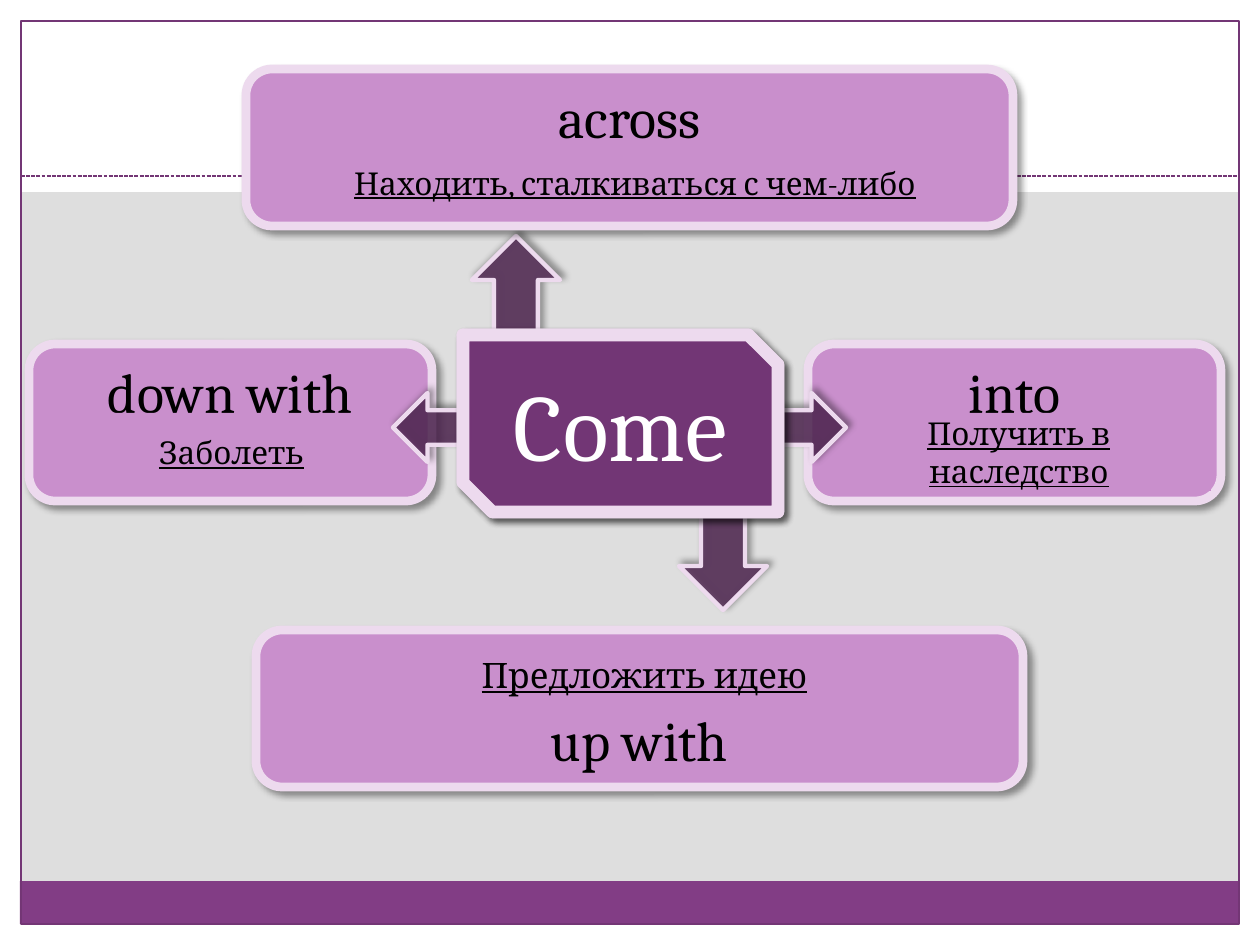
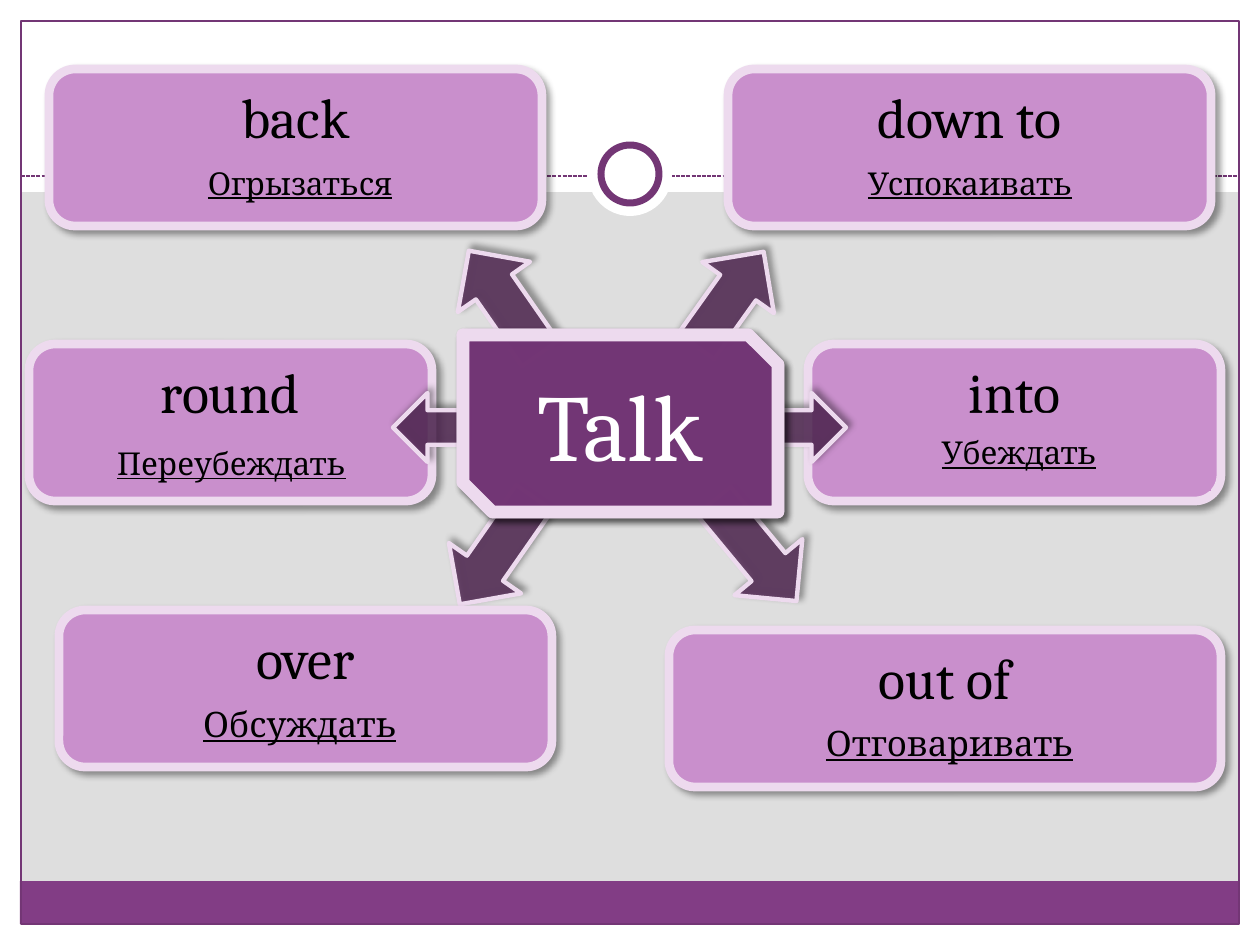
from dataclasses import dataclass

from lxml.etree import SubElement
from pptx import Presentation
from pptx.dml.color import RGBColor
from pptx.enum.dml import MSO_LINE
from pptx.enum.shapes import MSO_CONNECTOR as Connector, MSO_SHAPE as Shape
from pptx.enum.text import MSO_ANCHOR as Anchor, PP_ALIGN as Align
from pptx.oxml.ns import qn
from pptx.util import Pt

PX = 914400 / 126
PAGE_W, PAGE_H = 1260, 945
MARGIN = 21
CARD_H = 157


@dataclass(frozen=True)
class Theme:
    font: str = "Cambria"
    paper: str = "FFFFFF"
    backdrop: str = "DEDEDE"
    frame: str = "733675"
    footer: str = "823D85"
    card: str = "C98FCC"
    edge: str = "EDDAEE"
    arrow: str = "502552"
    hub: str = "78387B"
    ink: str = "000000"
    hub_pt: int = 54
    word_pt: int = 32
    large_meaning_pt: int = 20
    meaning_pt: int = 18


def emu(px):
    return round(px * PX)


class Board:
    def __init__(self, deck, theme):
        self.deck, self.theme, self.page = deck, theme, None

    def new_page(self, ring=False):
        theme = self.theme
        self.page = self.deck.slides.add_slide(self.deck.slide_layouts[6])
        backdrop = self.page.background.fill
        backdrop.solid()
        backdrop.fore_color.rgb = RGBColor.from_string(theme.backdrop)
        for band in ((0, PAGE_H - MARGIN, PAGE_W, MARGIN), (0, 0, PAGE_W, 192),
                     (0, 0, MARGIN, PAGE_H), (PAGE_W - MARGIN, 0, MARGIN, PAGE_H)):
            self.shape(Shape.RECTANGLE, band, theme.paper)
        self.shape(Shape.RECTANGLE, (20, 881, 1218, 43), theme.footer)
        self.shape(Shape.RECTANGLE,
                   (MARGIN, MARGIN, PAGE_W - 2 * MARGIN, PAGE_H - 2 * MARGIN),
                   line=(theme.frame, 0.75))
        self.dashed_rule(176)
        if ring:
            self.shape(Shape.OVAL, (588, 132, 84, 84), theme.paper)
            self.shape(Shape.OVAL, (601, 145, 58, 58), theme.paper, (theme.frame, 4))

    def shape(self, kind, box, fill=None, line=None, alpha=None, shadow_angle=None):
        shape = self.page.shapes.add_shape(kind, *map(emu, box))
        shape.shadow.inherit = False
        if fill:
            shape.fill.solid()
            shape.fill.fore_color.rgb = RGBColor.from_string(fill)
        else:
            shape.fill.background()
        properties = shape.element.spPr
        if alpha:
            color = properties.find(qn("a:solidFill")).find(qn("a:srgbClr"))
            SubElement(color, qn("a:alpha"), val=str(alpha * 1000))
        if line:
            shape.line.color.rgb = RGBColor.from_string(line[0])
            shape.line.width = Pt(line[1])
        else:
            shape.line.fill.background()
        if shadow_angle is not None:
            shadow = SubElement(properties.find(qn("a:effectLst")), qn("a:outerShdw"),
                                blurRad=str(int(Pt(4))), dist=str(int(Pt(3))),
                                dir=str(shadow_angle * 60000), rotWithShape="0")
            color = SubElement(shadow, qn("a:srgbClr"), val=self.theme.ink)
            SubElement(color, qn("a:alpha"), val="40000")
        return shape

    def dashed_rule(self, y):
        rule = self.page.shapes.add_connector(
            Connector.STRAIGHT, *map(emu, (MARGIN, y, PAGE_W - MARGIN, y)))
        rule.line.color.rgb = RGBColor.from_string(self.theme.frame)
        rule.line.width = Pt(0.75)
        rule.line.dash_style = MSO_LINE.SQUARE_DOT
        SubElement(rule.element.spPr, qn("a:effectLst"))

    def label(self, shape, text, size, color, anchor=Anchor.MIDDLE, underline=None):
        frame = shape.text_frame
        frame.word_wrap = True
        frame.vertical_anchor = anchor
        para = frame.paragraphs[0]
        para.alignment = Align.CENTER
        span = para.add_run()
        span.text = text
        span.font.name = self.theme.font
        span.font.size = Pt(size)
        span.font.color.rgb = RGBColor.from_string(color)
        span.font.underline = underline

    def card(self, word, place, meaning, meaning_box, large=False, anchor=Anchor.TOP):
        """Draw a word card; place is its left, top and width."""
        theme = self.theme
        card = self.shape(Shape.ROUNDED_RECTANGLE, (*place, CARD_H), theme.card,
                          (theme.edge, 5), shadow_angle=45)
        self.label(card, word, theme.word_pt, theme.ink, anchor)
        caption = self.shape(Shape.RECTANGLE, meaning_box, theme.card)
        size = theme.large_meaning_pt if large else theme.meaning_pt
        self.label(caption, meaning, size, theme.ink, underline=True)

    def arrow(self, box, angle):
        arrow = self.shape(Shape.RIGHT_ARROW, box, self.theme.arrow,
                           (self.theme.edge, 2.5), alpha=79, shadow_angle=315)
        arrow.rotation = angle

    def hub(self, verb):
        """Draw the side arrows and the two stacked translucent plates."""
        for left, angle in ((393, 180), (777, 0)):
            self.arrow((left, 393, 69, 69), angle)
        for _ in range(2):
            plate = self.shape(Shape.SNIP_2_DIAG_RECTANGLE, (463, 335, 315, 177),
                               self.theme.hub, (self.theme.edge, 7.25),
                               alpha=88, shadow_angle=45)
        self.label(plate, verb, self.theme.hub_pt, self.theme.paper)


def build_come(board):
    board.new_page()
    board.arrow((674, 517, 98, 88), 90)
    board.arrow((467, 241, 98, 88), 270)
    board.card("into", (808, 344, 413), "Получить в наследство", (827, 413, 384, 78))
    board.card("down with", (29, 344, 403), "Заболеть", (69, 413, 325, 78))
    board.card("up with", (256, 630, 767), "Предложить идею", (354, 650, 581, 49),
               large=True, anchor=Anchor.BOTTOM)
    board.card("across", (246, 69, 767), "Находить, сталкиваться с чем-либо",
               (276, 158, 718, 49))
    board.hub("Come")


def build_talk(board):
    board.new_page(ring=True)
    board.arrow((690, 507, 130, 88), 50.4)
    board.arrow((432, 507, 130, 88), 124.9)
    board.arrow((672, 255, 116, 88), 305.5)
    board.arrow((442, 258, 125, 88), 235.2)
    board.card("into", (808, 344, 413), "Убеждать", (827, 413, 384, 78))
    board.card("round", (29, 344, 403), "Переубеждать", (69, 433, 325, 59))
    board.card("out of", (669, 630, 552), "Отговаривать", (708, 718, 483, 49), large=True)
    board.card("back", (49, 69, 493), "Огрызаться", (78, 158, 444, 49))
    board.card("down to", (728, 69, 483), "Успокаивать", (748, 158, 444, 49))
    board.card("over", (59, 610, 493), "Обсуждать", (78, 699, 444, 49), large=True)
    board.hub("Talk")


def main():
    deck = Presentation()
    deck.slide_width, deck.slide_height = emu(PAGE_W), emu(PAGE_H)
    board = Board(deck, Theme())
    build_come(board)
    build_talk(board)
    deck.save("out.pptx")


if __name__ == "__main__":
    main()
